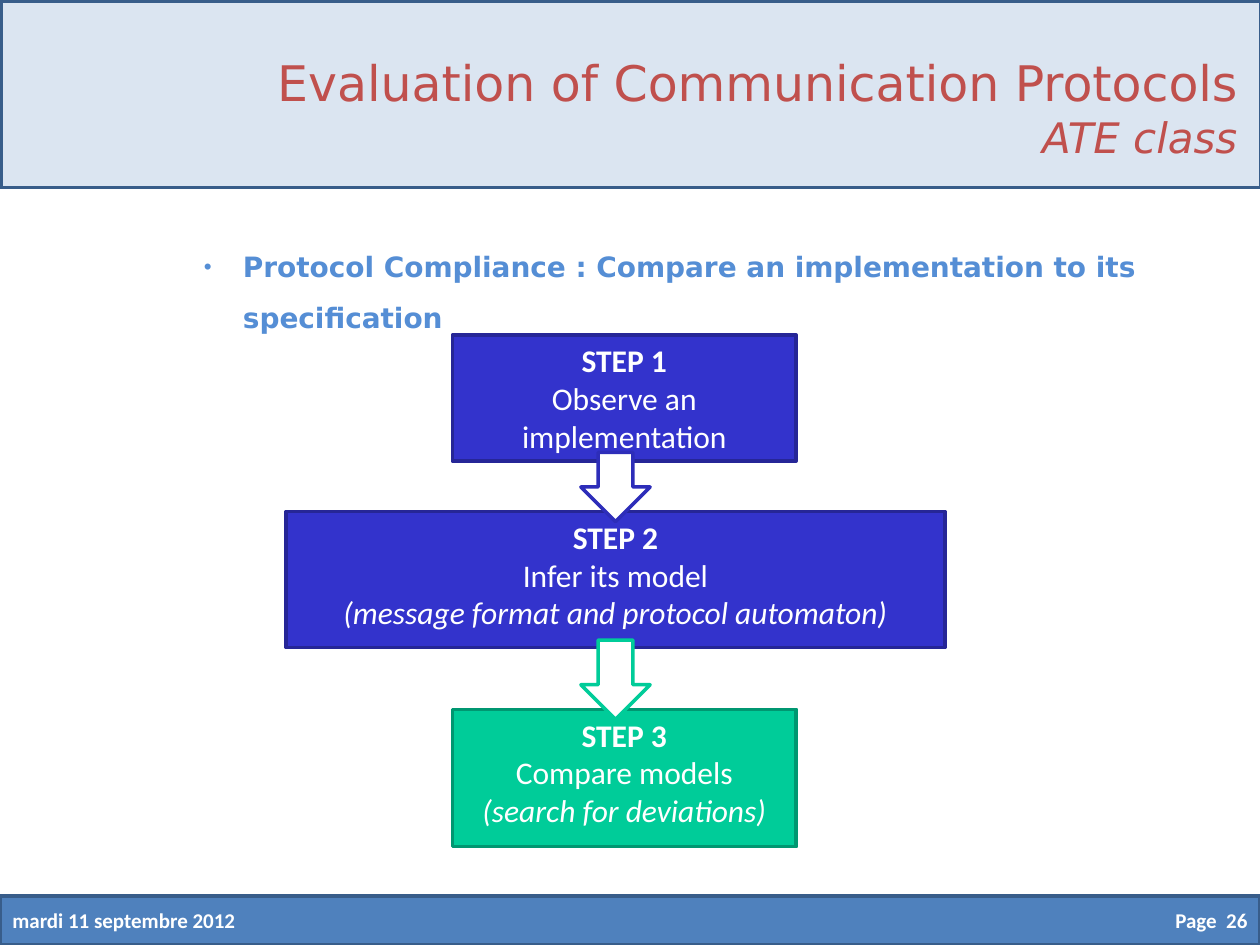
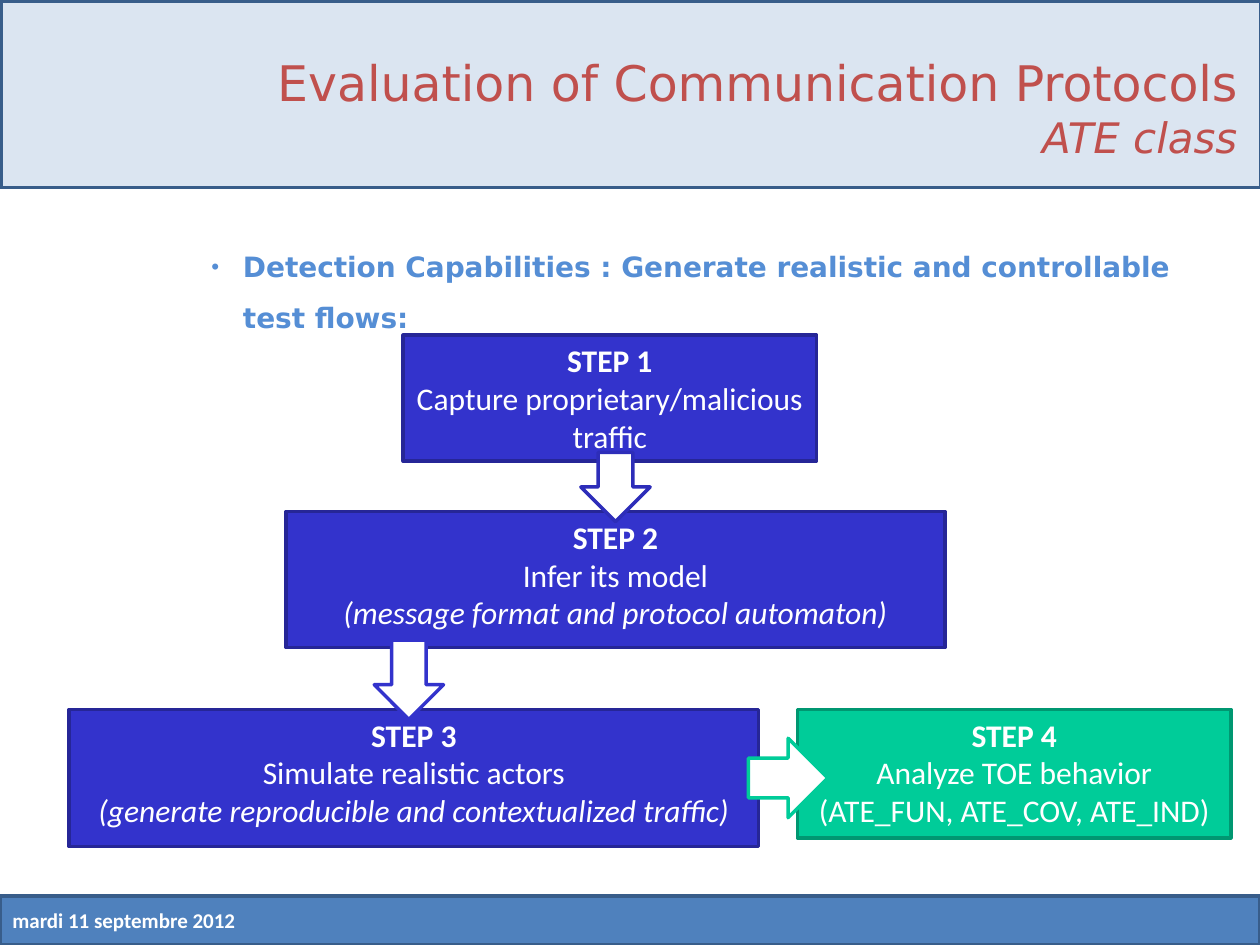
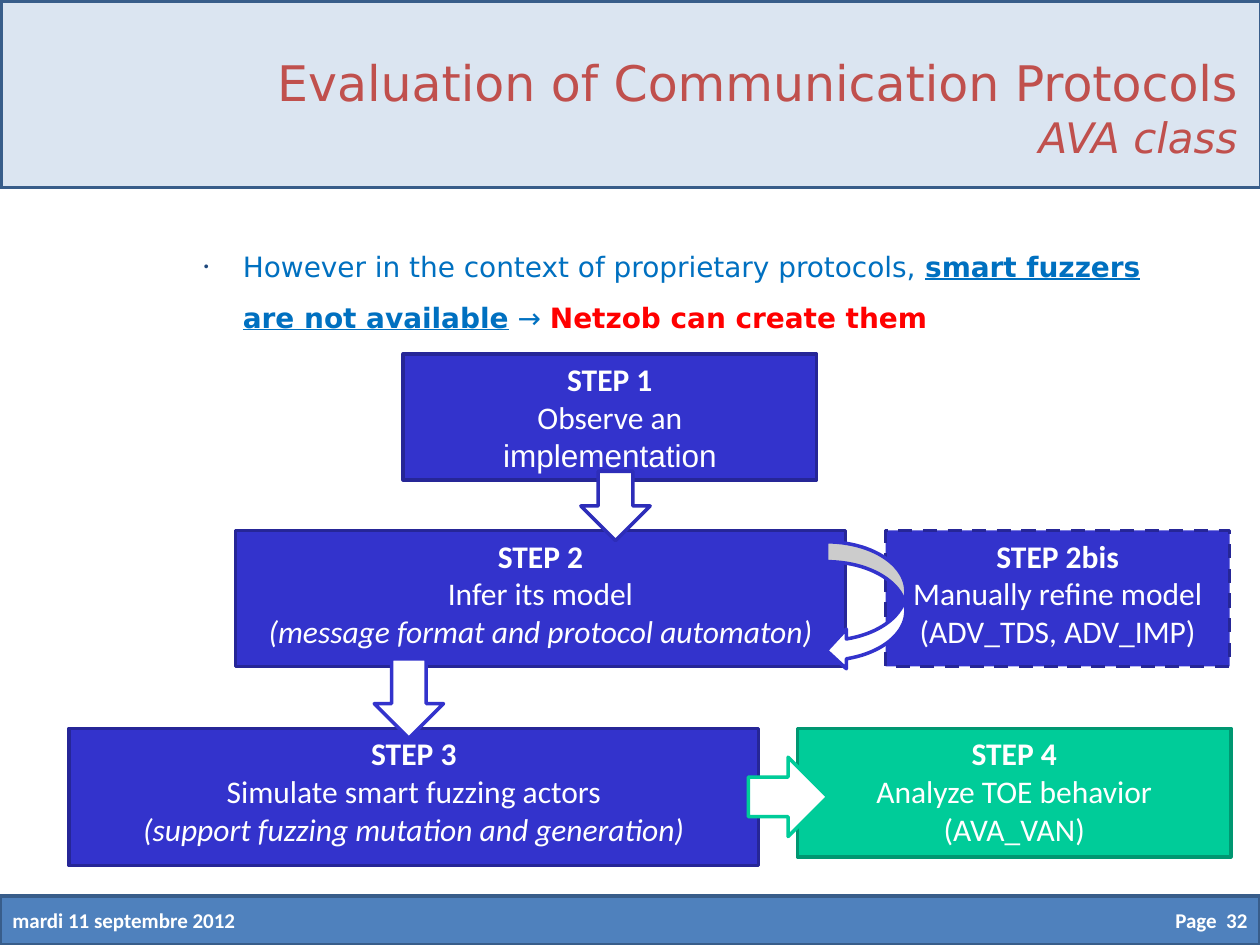
from lxml import etree
from pptx import Presentation
from pptx.dml.color import RGBColor
from pptx.enum.dml import MSO_LINE
from pptx.enum.shapes import MSO_SHAPE
from pptx.enum.text import MSO_ANCHOR, PP_ALIGN
from pptx.oxml.ns import qn
from pptx.util import Inches, Pt

RECTANGLE = MSO_SHAPE.RECTANGLE
DOWN, RIGHT = MSO_SHAPE.DOWN_ARROW, MSO_SHAPE.RIGHT_ARROW
CURVED = MSO_SHAPE.CURVED_LEFT_ARROW
DASH = MSO_LINE.DASH
LEFT_ALIGN, CENTER_ALIGN, RIGHT_ALIGN = PP_ALIGN.LEFT, PP_ALIGN.CENTER, PP_ALIGN.RIGHT
MIDDLE, TOP = MSO_ANCHOR.MIDDLE, MSO_ANCHOR.TOP

WHITE = RGBColor(0xFF, 0xFF, 0xFF)
BAND = RGBColor(0x4F, 0x81, 0xBD)
BAND_LINE = RGBColor(0x38, 0x5D, 0x8A)
TITLE_RED = RGBColor(0xC0, 0x50, 0x4D)
LIGHT_BLUE = RGBColor(0x55, 0x8E, 0xD5)
MID_BLUE = RGBColor(0x00, 0x70, 0xC0)
RED = RGBColor(0xFF, 0x00, 0x00)
INDIGO = RGBColor(0x33, 0x33, 0xCC)
INDIGO_LINE = RGBColor(0x26, 0x26, 0x97)
INDIGO_ARROW = RGBColor(0x2D, 0x2D, 0xB9)
GREEN = RGBColor(0x00, 0xCC, 0x99)
GREEN_LINE = RGBColor(0x00, 0x97, 0x71)

BODY_FONT, HEAD_FONT = "Calibri", "DejaVu Sans"

# Tops of the three rows and of the arrows, below the first row
ROW_1, ROW_2, ROW_3 = 0, 1.4, 2.97
ARROW_1, ARROW_2, ARROW_3 = 0.93, 2.42, 3.2

# Boxes: left, row, width, height, lines; arrows: kind, left, top, width, height, colour
INFER_LINES = ["STEP 2", "Infer its model", "(message format and protocol automaton)"]
INFER_BOX = (2.27, ROW_2, 5.23, 1.08, INFER_LINES)
FIRST_ARROW = (DOWN, 4.61, ARROW_1, 0.55, 0.55, INDIGO_ARROW)
FOUR_STEP_ARROWS = [
    FIRST_ARROW,
    (DOWN, 2.97, ARROW_2, 0.55, 0.63, INDIGO),
    (RIGHT, 5.94, ARROW_3, 0.63, 0.63, GREEN),
]

# Bullet runs: text, colour, bold, underline
SLIDES = [
    {
        "subtitle": "ATE class", "page": "Page  26", "start": 2.66,
        "hanging": 0.31, "bullet": ("558ED5", 80),
        "runs": [("Protocol Compliance : Compare an implementation to its specification",
                  LIGHT_BLUE, True, False)],
        "boxes": [
            (3.59, ROW_1, 2.73, 1, ["STEP 1", "Observe an implementation"]),
            INFER_BOX,
            (3.59, ROW_3, 2.73, 1.09,
             ["STEP 3", "Compare models", "(search for deviations)"]),
        ],
        "final": "STEP 3",
        "arrows": [FIRST_ARROW, (DOWN, 4.61, ARROW_2, 0.55, 0.63, GREEN)],
    },
    {
        "subtitle": "ATE class", "page": None, "start": 2.66,
        "hanging": 0.25, "bullet": ("558ED5", 80),
        "runs": [("Detection Capabilities : Generate realistic and controllable test flows:",
                  LIGHT_BLUE, True, False)],
        "boxes": [
            (3.2, ROW_1, 3.28, 1, ["STEP 1", "Capture proprietary/malicious traffic"]),
            INFER_BOX,
            (0.55, ROW_3, 5.47, 1.09,
             ["STEP 3", "Simulate realistic actors",
              "(generate reproducible and contextualized traffic)"]),
            (6.33, ROW_3, 3.44, 1.02,
             ["STEP 4", "Analyze TOE behavior", "(ATE_FUN, ATE_COV, ATE_IND)"]),
        ],
        "final": "STEP 4",
        "arrows": FOUR_STEP_ARROWS,
    },
    {
        "subtitle": "AVA class", "page": "Page  32", "start": 2.81,
        "hanging": 0.31, "bullet": ("1F497D", 50),
        "runs": [("However in the context of proprietary protocols, ", MID_BLUE, False, False),
                 ("smart fuzzers are not available", MID_BLUE, True, True),
                 (" → ", MID_BLUE, False, False),
                 ("Netzob can create them", RED, True, False)],
        "boxes": [
            (3.2, ROW_1, 3.28, 1, ["STEP 1", "Observe an", "implementation"]),
            (1.87, ROW_2, 4.84, 1.08, INFER_LINES),
            (0.55, ROW_3, 5.47, 1.09,
             ["STEP 3", "Simulate smart fuzzing actors",
              "(support fuzzing mutation and generation)"]),
            (6.33, ROW_3, 3.44, 1.02,
             ["STEP 4", "Analyze TOE behavior", "(AVA_VAN)"]),
            (7.03, ROW_2, 2.73, 1.08,
             ["STEP 2bis", "Manually refine model", "(ADV_TDS, ADV_IMP)"]),
        ],
        "final": "STEP 4",
        "arrows": FOUR_STEP_ARROWS + [(CURVED, 6.56, 1.49, 0.63, 1.02, INDIGO)],
    },
]


def add_outlined(slide, kind, left, top, width, height, fill, line):
    shape = slide.shapes.add_shape(
        kind, Inches(left), Inches(top), Inches(width), Inches(height))
    shape.shadow.inherit = False
    shape.fill.solid()
    shape.fill.fore_color.rgb = fill
    shape.line.color.rgb = line
    shape.line.width = Pt(2)
    return shape


def add_text(slide, left, top, width, height, lines, alignment, anchor, font, color):
    box = slide.shapes.add_textbox(
        Inches(left), Inches(top), Inches(width), Inches(height))
    frame = box.text_frame
    frame.word_wrap = True
    frame.vertical_anchor = anchor
    frame.text = "\n".join(text for text, size, bold, italic in lines)
    for paragraph, (text, size, bold, italic) in zip(frame.paragraphs, lines):
        paragraph.alignment = alignment
        run_font = paragraph.runs[0].font
        run_font.name, run_font.size, run_font.color.rgb = font, Pt(size), color
        run_font.bold, run_font.italic = bold, italic


presentation = Presentation()
presentation.slide_width, presentation.slide_height = Inches(10), Inches(7.5)

for content in SLIDES:
    slide = presentation.slides.add_slide(presentation.slide_layouts[6])

    # Bands, the upper one at 20 % opacity
    add_outlined(slide, RECTANGLE, 0, 7.11, 10, 0.39, BAND, BAND_LINE)
    header = add_outlined(slide, RECTANGLE, 0.01, 0.01, 10, 1.48, BAND, BAND_LINE)
    header_color = header.fill._xPr.find(qn("a:solidFill"))[0]
    etree.SubElement(header_color, qn("a:alpha"), val="20000")

    # Footer and title
    footers = [(0, "mardi 11 septembre 2012", LEFT_ALIGN), (7.67, content["page"], RIGHT_ALIGN)]
    for left, text, alignment in footers:
        if text:
            add_text(slide, left, 7.1, 2.33, 0.4, [(text, 12, True, False)],
                     alignment, MIDDLE, BODY_FONT, WHITE)
    title_lines = [("Evaluation of Communication Protocols", 28, False, False),
                   (content["subtitle"], 24, False, True)]
    add_text(slide, 1.64, 0.37, 8.28, 1.17, title_lines,
             RIGHT_ALIGN, TOP, HEAD_FONT, TITLE_RED)

    # Bulleted statement
    statement = slide.shapes.add_textbox(Inches(1.02), Inches(1.8), Inches(8.44), Inches(0.9))
    statement.text_frame.word_wrap = True
    paragraph = statement.text_frame.paragraphs[0]
    paragraph.level = 1
    paragraph.line_spacing = 1.5
    bullet_color, bullet_size = content["bullet"]
    properties = paragraph._p.get_or_add_pPr()
    properties.set("marL", str(Inches(0.81)))
    properties.set("indent", str(-Inches(content["hanging"])))
    color_element = etree.SubElement(properties, qn("a:buClr"))
    etree.SubElement(color_element, qn("a:srgbClr"), val=bullet_color)
    etree.SubElement(properties, qn("a:buSzPct"), val=str(bullet_size * 1000))
    etree.SubElement(properties, qn("a:buFont"), typeface="Arial")
    etree.SubElement(properties, qn("a:buChar"), char="•")
    for text, color, bold, underline in content["runs"]:
        run = paragraph.add_run()
        run.text = text
        run.font.name, run.font.size, run.font.color.rgb = HEAD_FONT, Pt(16), color
        run.font.bold, run.font.underline = bold, underline

    # Step boxes: the final step is green, the optional one dashed
    for left, row, width, height, lines in content["boxes"]:
        is_final = lines[0] == content["final"]
        fill, line_color = (GREEN, GREEN_LINE) if is_final else (INDIGO, INDIGO_LINE)
        step = add_outlined(slide, RECTANGLE, left, content["start"] + row,
                            width, height, fill, line_color)
        if lines[0] == "STEP 2bis":
            step.line.dash_style = DASH
        frame = step.text_frame
        frame.word_wrap = True
        frame.vertical_anchor = TOP
        frame.text = "\n".join(lines)
        for index, paragraph in enumerate(frame.paragraphs):
            text = lines[index]
            paragraph.alignment = CENTER_ALIGN
            font = paragraph.runs[0].font
            font.name = "Arial" if text == "implementation" else BODY_FONT
            font.size, font.color.rgb = Pt(18), WHITE
            font.bold = index == 0
            # Remarks in brackets are italic, class names upright
            font.italic = text[0] == "(" and text[1].islower()

    # Arrows between the steps
    for kind, left, top, width, height, color in content["arrows"]:
        add_outlined(slide, kind, left, content["start"] + top, width, height, WHITE, color)

presentation.save("out.pptx")
